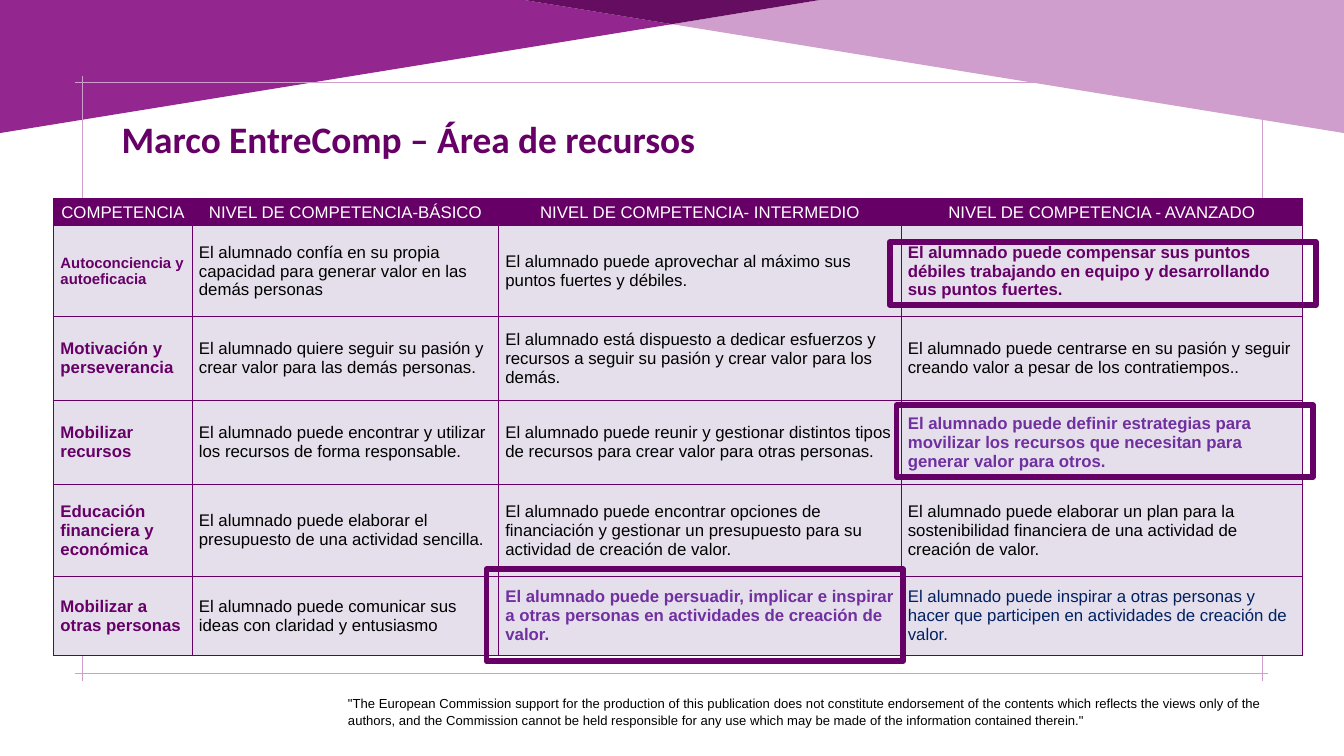
from typing import NamedTuple

from lxml.etree import SubElement
from pptx import Presentation
from pptx.dml.color import RGBColor
from pptx.enum.shapes import MSO_CONNECTOR, MSO_SHAPE
from pptx.enum.text import MSO_ANCHOR as Anchor, MSO_AUTO_SIZE as AutoSize, PP_ALIGN as Align
from pptx.oxml.ns import qn
from pptx.util import Inches, Pt

PURPLE, VIOLET, NAVY = "660066", "7030A0", "002060"
PINK, LILAC, BLACK, WHITE = "CF9ECC", "E5DFEC", "000000", "FFFFFF"


class Banner(NamedTuple):
    color: str
    points: list[tuple[float, float]]


class Box(NamedTuple):
    left: float
    top: float
    width: float
    height: float


BANNERS = [
    Banner("93268F", [(0, 1.98), (0, 0), (7.8, 0), (10, 0.36)]),
    Banner(PINK, [(20, 1.98), (10, 0.36), (12.2, 0), (20, 0)]),
    Banner("640D61", [(10, 0.36), (7.8, 0), (12.2, 0)]),
]
GUIDES = [
    (1.12, 1.22, 18.87, 1.22), (1.12, 10.02, 18.87, 10.02),
    (1.22, 1.13, 1.22, 10.13), (18.78, 1.13, 18.78, 10.13),
]
HIGHLIGHTS = [
    Box(13.24, 3.6, 6.34, 0.94), Box(7.24, 8.47, 6.2, 1.37), Box(13.34, 6.03, 6.2, 1.07),
]
COLUMN_WIDTHS = [2.06, 4.56, 5.99, 5.97]
ROW_HEIGHTS = [0.24, 1.35, 1.25, 1.25, 1.37, 1.17]
ROWS = [
    ["COMPETENCIA", "NIVEL DE COMPETENCIA-BÁSICO", "NIVEL DE COMPETENCIA- INTERMEDIO",
     "NIVEL DE COMPETENCIA - AVANZADO"],
    ["Autoconciencia y autoeficacia",
     "El alumnado confía en su propia capacidad para generar valor en las demás personas",
     "El alumnado puede aprovechar al máximo sus puntos fuertes y débiles.",
     "El alumnado puede compensar sus puntos débiles trabajando en equipo y desarrollando "
     "sus puntos fuertes."],
    ["Motivación y perseverancia",
     "El alumnado quiere seguir su pasión y crear valor para las demás personas.",
     "El alumnado está dispuesto a dedicar esfuerzos y recursos a seguir su pasión y crear "
     "valor para los demás.",
     "El alumnado puede centrarse en su pasión y seguir creando valor a pesar de los "
     "contratiempos.."],
    ["Mobilizar recursos",
     "El alumnado puede encontrar y utilizar los recursos de forma responsable.",
     "El alumnado puede reunir y gestionar distintos tipos de recursos para crear valor "
     "para otras personas.",
     "El alumnado puede definir estrategias para movilizar los recursos que necesitan para "
     "generar valor para otros."],
    ["Educación financiera y económica",
     "El alumnado puede elaborar el presupuesto de una actividad sencilla.",
     "El alumnado puede encontrar opciones de financiación y gestionar un presupuesto para "
     "su actividad de creación de valor.",
     "El alumnado puede elaborar un plan para la sostenibilidad financiera de una actividad "
     "de creación de valor."],
    ["Mobilizar a otras personas",
     "El alumnado puede comunicar sus ideas con claridad y entusiasmo",
     "El alumnado puede persuadir, implicar e inspirar a otras personas en actividades de "
     "creación de valor.",
     "El alumnado puede inspirar a otras personas y hacer que participen en actividades de "
     "creación de valor."],
]
# Cells whose text departs from its row or column format
SPECIAL_CELLS = {
    (1, 0): {"size": Pt(16)},
    (1, 3): {"bold": True, "color": PURPLE},
    (3, 3): {"bold": True, "color": VIOLET},
    (5, 2): {"bold": True, "color": VIOLET},
    (5, 3): {"color": NAVY},
}
DISCLAIMER = (
    '"The European Commission support for the production of this publication does not '
    "constitute endorsement of the contents which reflects the views only of the authors, "
    "and the Commission cannot be held responsible for any use which may be made of the "
    'information contained therein."'
)


def rgb(color: str) -> RGBColor:
    return RGBColor.from_string(color)


def format_font(font, color: str, **values) -> None:
    for name, value in values.items():
        setattr(font, name, value)
    font.color.rgb = rgb(color)


def draw_banner(slide, banner: Banner) -> None:
    points = [(Inches(x), Inches(y)) for x, y in banner.points]
    builder = slide.shapes.build_freeform(*points[0])
    builder.add_line_segments(points[1:], close=True)
    shape = builder.convert_to_shape()
    shape.shadow.inherit = False
    shape.fill.solid()
    shape.fill.fore_color.rgb = rgb(banner.color)
    shape.line.fill.background()


def draw_guide(slide, ends: tuple[float, ...]) -> None:
    line = slide.shapes.add_connector(MSO_CONNECTOR.STRAIGHT, *map(Inches, ends))
    line.line.color.rgb = rgb(PINK)
    line.line.width = Pt(0.7)
    SubElement(line._element.spPr, qn("a:effectLst"))


def draw_highlight(slide, box: Box) -> None:
    shape = slide.shapes.add_shape(MSO_SHAPE.RECTANGLE, *map(Inches, box))
    shape.shadow.inherit = False
    shape.fill.background()
    shape.line.color.rgb = rgb(PURPLE)
    shape.line.width = Pt(6)


def set_borders(cell, color: str, width: float) -> None:
    properties = cell._tc.get_or_add_tcPr()
    for index, side in enumerate(("lnL", "lnR", "lnT", "lnB")):
        line = SubElement(properties, qn(f"a:{side}"), w=str(Pt(width)))
        fill = SubElement(line, qn("a:solidFill"))
        SubElement(fill, qn("a:srgbClr"), val=color)
        properties.insert(index, line)


def fill_cell(cell, row: int, column: int) -> None:
    header = row == 0
    cell.fill.solid()
    cell.fill.fore_color.rgb = rgb(PURPLE if header else LILAC)
    set_borders(cell, PURPLE, 1.5)
    cell.vertical_anchor = Anchor.MIDDLE
    cell.text = ROWS[row][column]
    paragraph = cell.text_frame.paragraphs[0]
    paragraph.alignment = Align.CENTER if header else Align.LEFT
    competence = column == 0 and not header
    color = WHITE if header else PURPLE if competence else BLACK
    style = {"name": "Arial", "size": Pt(18), "bold": competence, "color": color}
    format_font(paragraph.runs[0].font, **(style | SPECIAL_CELLS.get((row, column), {})))


def draw_table(slide) -> None:
    box = Box(0.8, 2.96, sum(COLUMN_WIDTHS), sum(ROW_HEIGHTS))
    table = slide.shapes.add_table(len(ROWS), len(COLUMN_WIDTHS), *map(Inches, box)).table
    for column, width in zip(table.columns, COLUMN_WIDTHS):
        column.width = Inches(width)
    for row, height in zip(table.rows, ROW_HEIGHTS):
        row.height = Inches(height)
    for row in range(len(ROWS)):
        for column in range(len(COLUMN_WIDTHS)):
            fill_cell(table.cell(row, column), row, column)


def write_title(slide) -> None:
    title = slide.shapes.title
    box = {"left": 1.71, "top": 1.68, "width": 15.5, "height": 0.77}
    for name, value in box.items():
        setattr(title, name, Inches(value))
    frame = title.text_frame
    frame.text = "Marco EntreComp – Área de recursos"
    frame.auto_size = AutoSize.NONE
    frame.vertical_anchor = Anchor.TOP
    paragraph = frame.paragraphs[0]
    paragraph.alignment = Align.LEFT
    format_font(paragraph.runs[0].font, PURPLE, name="Calibri", size=Pt(40), bold=True)


def write_disclaimer(slide) -> None:
    frame = slide.shapes.add_textbox(*map(Inches, Box(5.08, 10.29, 13.79, 0.52))).text_frame
    frame.word_wrap = True
    frame.text = DISCLAIMER
    paragraph = frame.paragraphs[0]
    paragraph.alignment = Align.JUSTIFY
    paragraph.line_spacing = 1.07
    format_font(paragraph.runs[0].font, BLACK, name="Arial", size=Pt(14))


def main() -> None:
    presentation = Presentation()
    presentation.slide_width = Inches(20)
    presentation.slide_height = Inches(11.25)
    slide = presentation.slides.add_slide(presentation.slide_layouts[5])

    # Background decoration
    for banner in BANNERS:
        draw_banner(slide, banner)
    for ends in GUIDES:
        draw_guide(slide, ends)

    # Content
    write_title(slide)
    write_disclaimer(slide)
    draw_table(slide)
    for box in HIGHLIGHTS:
        draw_highlight(slide, box)

    presentation.save("out.pptx")


if __name__ == "__main__":
    main()
